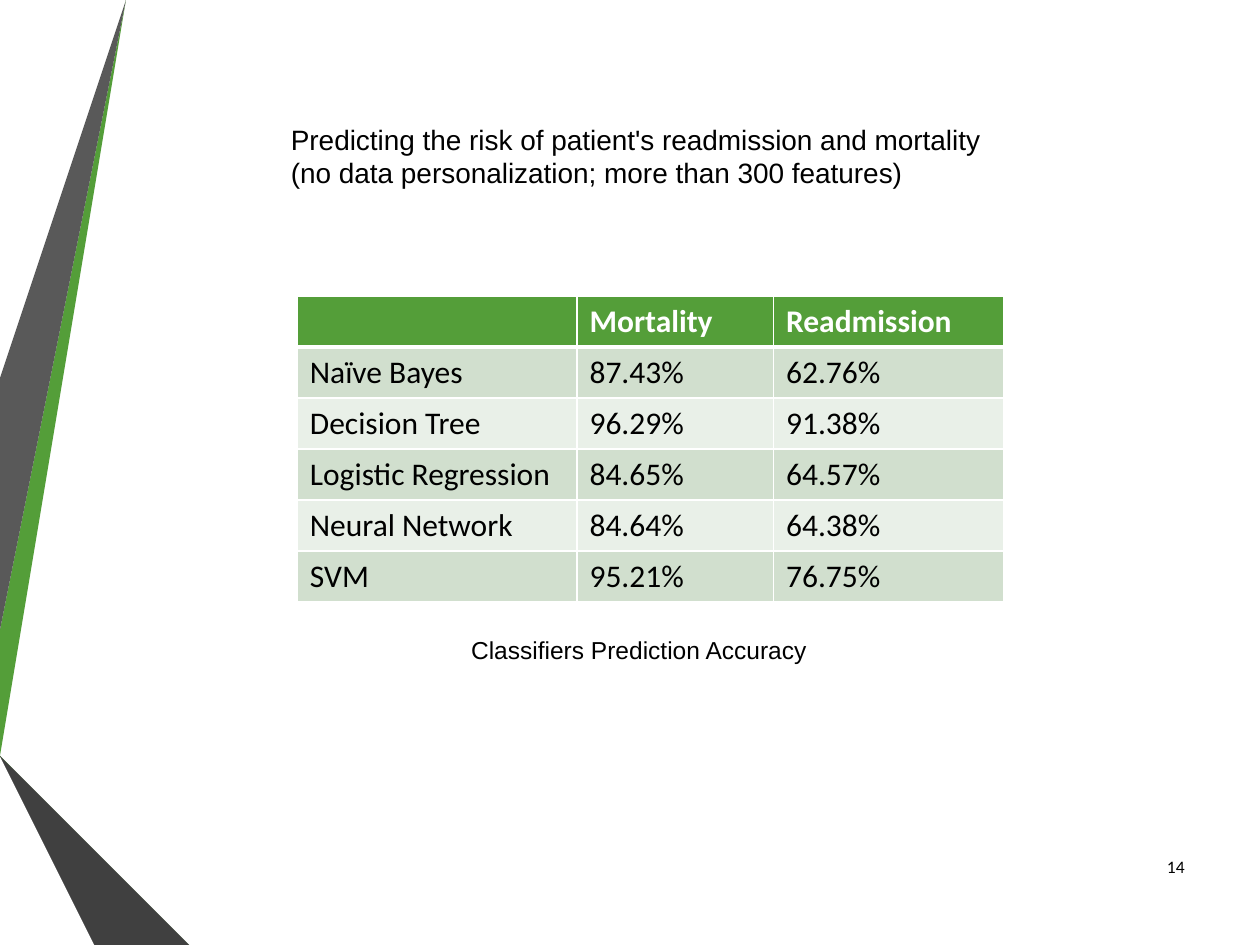
from lxml import etree
from pptx import Presentation
from pptx.dml.color import RGBColor
from pptx.enum import text
from pptx.oxml import ns
from pptx.util import Inches, Pt

WHITE = RGBColor(0xFF, 0xFF, 0xFF)
BLACK = RGBColor(0x00, 0x00, 0x00)
GREEN = RGBColor(0x54, 0x9E, 0x39)
MID_GREEN = RGBColor(0x3F, 0x76, 0x2B)
DARK_GREEN = RGBColor(0x2A, 0x4F, 0x1C)
GRAY = RGBColor(0x59, 0x59, 0x59)
DARK_GRAY = RGBColor(0x40, 0x40, 0x40)
CHARCOAL = RGBColor(0x26, 0x26, 0x26)
BAND_DARK = RGBColor(0xD1, 0xDF, 0xCE)
BAND_LIGHT = RGBColor(0xE9, 0xF0, 0xE8)


def add_text(slide, box, lines, font_name, size, wrap=False):
    shape = slide.shapes.add_textbox(*[Inches(value) for value in box])
    frame = shape.text_frame
    frame.word_wrap = wrap
    frame.text = "\n".join(lines)
    for paragraph in frame.paragraphs:
        paragraph.font.name = font_name
        paragraph.font.size = Pt(size)
        paragraph.font.color.rgb = BLACK
    return frame


def set_borders(cell, bottom_width):
    """Draw white cell borders, 1 pt except for the bottom one."""
    properties = cell._tc.get_or_add_tcPr()
    for side, width in (("L", 1), ("R", 1), ("T", 1), ("B", bottom_width)):
        line = etree.SubElement(properties, ns.qn(f"a:ln{side}"), w=str(Pt(width)))
        fill = etree.SubElement(line, ns.qn("a:solidFill"))
        etree.SubElement(fill, ns.qn("a:srgbClr"), val=str(WHITE))


presentation = Presentation()
presentation.slide_width = Inches(10)
presentation.slide_height = Inches(7.5)
slide = presentation.slides.add_slide(presentation.slide_layouts[6])

# Folded ribbons along the left edge
ribbons = [
    (GREEN, [(0, 5.44), (0, 5.75), (0.22, 5.79), (1.17, 0), (0.89, 0)]),
    (GRAY, [(0.83, 0), (0.55, 0), (0, 3.36), (0, 5.06)]),
    (CHARCOAL, [(0, 6.19), (0, 6.21), (0.93, 7.5), (0.99, 7.5)]),
    (DARK_GREEN, [(0, 5.79), (0, 5.8), (1.56, 7.5), (1.63, 7.5)]),
    (MID_GREEN, [(0, 5.79), (1.63, 7.5), (2.33, 7.5), (0.22, 5.79), (0, 5.75)]),
    (DARK_GRAY, [(0, 6.19), (0.99, 7.5), (1.51, 7.5), (0, 5.86)]),
]
for color, points in ribbons:
    builder = slide.shapes.build_freeform(*points[0], scale=Inches(1))
    builder.add_line_segments(points[1:], close=True)
    ribbon = builder.convert_to_shape()
    ribbon.shadow.inherit = False
    ribbon.fill.solid()
    ribbon.fill.fore_color.rgb = color
    ribbon.line.fill.background()

page_number = add_text(slide, (9.03, 6.68, 0.47, 0.4), ["14"], "Calibri", 10, wrap=True)
page_number.vertical_anchor = text.MSO_ANCHOR.MIDDLE
page_number.paragraphs[0].alignment = text.PP_ALIGN.RIGHT

add_text(slide, (2.21, 0.92, 5.75, 0.64),
         ["Predicting the risk of patient's readmission and mortality",
          "(no data personalization; more than 300 features)"], "Arial", 16)

# Accuracy table
accuracy_rows = [
    ("", "Mortality", "Readmission"),
    ("Naïve Bayes", "87.43%", "62.76%"),
    ("Decision Tree", "96.29%", "91.38%"),
    ("Logistic Regression", "84.65%", "64.57%"),
    ("Neural Network", "84.64%", "64.38%"),
    ("SVM", "95.21%", "76.75%"),
]
column_widths = [2.22, 1.56, 1.83]
table = slide.shapes.add_table(
    len(accuracy_rows), len(column_widths), Inches(2.36), Inches(2.35),
    Inches(sum(column_widths)), Inches(2.43)).table
for column, width in zip(table.columns, column_widths):
    column.width = Inches(width)

for row_index, values in enumerate(accuracy_rows):
    is_header = row_index == 0
    band = BAND_DARK if row_index % 2 else BAND_LIGHT
    for column_index, value in enumerate(values):
        cell = table.cell(row_index, column_index)
        set_borders(cell, bottom_width=3 if is_header else 1)
        cell.fill.solid()
        cell.fill.fore_color.rgb = GREEN if is_header else band
        cell.text = value
        font = cell.text_frame.paragraphs[0].font
        font.name = "Calibri"
        font.size = Pt(18)
        font.bold = is_header
        font.color.rgb = WHITE if is_header else BLACK

add_text(slide, (3.64, 4.99, 2.88, 0.34), ["Classifiers Prediction Accuracy"], "Arial", 14)

presentation.save("out.pptx")
